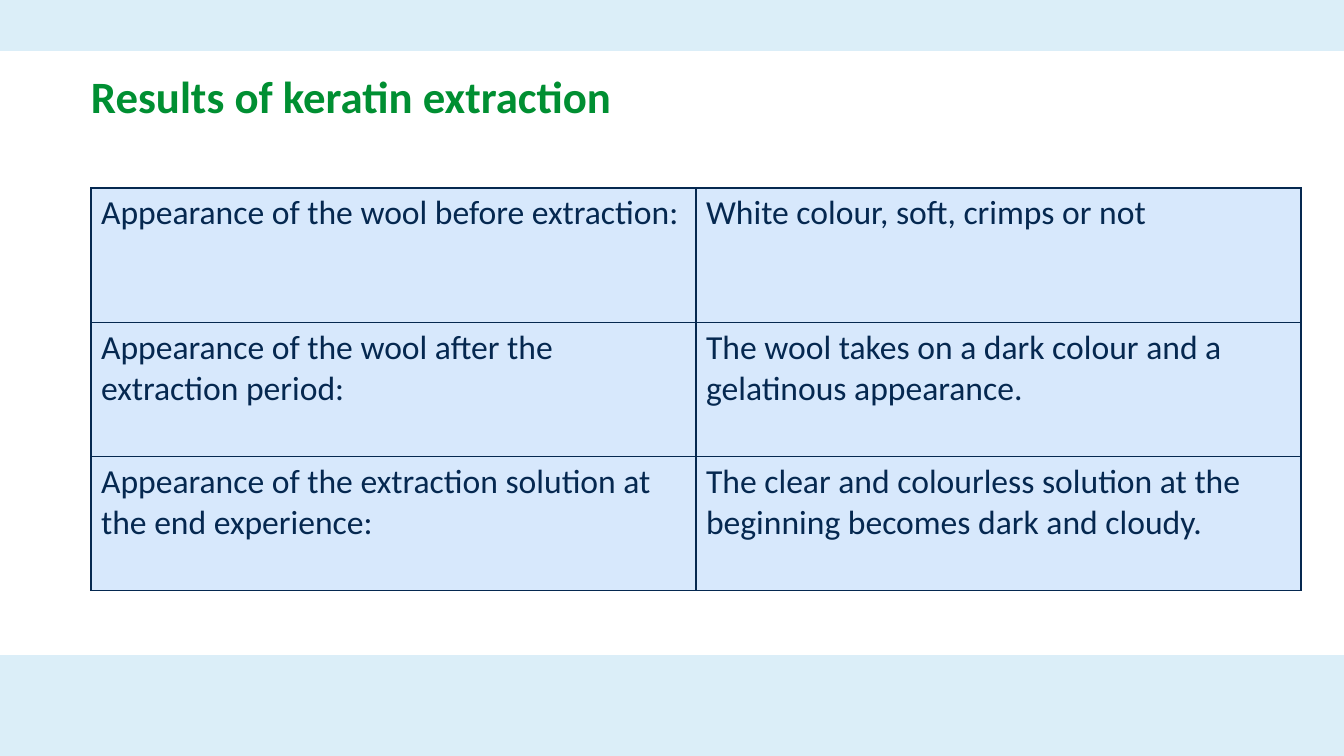
from lxml import etree
from pptx import Presentation
from pptx.dml.color import RGBColor
from pptx.enum.shapes import MSO_SHAPE
from pptx.enum.text import MSO_ANCHOR
from pptx.oxml.ns import qn
from pptx.util import Pt

RECT = MSO_SHAPE.RECTANGLE
MIDDLE = MSO_ANCHOR.MIDDLE

TITLE = "Results of keratin extraction"
RESULTS = [
    ("Appearance of the wool before extraction:",
     "White colour, soft, crimps or not"),
    ("Appearance of the wool after the extraction period:",
     "The wool takes on a dark colour and a gelatinous appearance."),
    ("Appearance of the extraction solution at the end experience:",
     "The clear and colourless solution at the beginning becomes dark and cloudy."),
]

FONT = "Calibri"
BAND, GREEN, NAVY, CELL = "DBEEF8", "008F32", "052850", "D7E8FC"
WIDTH, HEIGHT = 1344, 756
TOP_BAND, BOTTOM_BAND = 51, 101
LEFT = 91
TITLE_BOX = (LEFT, 51, 997, 96)
TABLE_BOX = (LEFT, 188, 1210, 403)


def px(n):
    return round(n * 914400 / 100.8)


def box(*lengths):
    return [px(n) for n in lengths]


def color(hex_string):
    return RGBColor.from_string(hex_string)


def add_run(p, text, size, hex_string, bold=False):
    r = p.add_run()
    r.text = text
    r.font.name = FONT
    r.font.size = Pt(size)
    r.font.bold = bold
    r.font.color.rgb = color(hex_string)


def add_band(s, top, height):
    sp = s.shapes.add_shape(RECT, *box(0, top, WIDTH, height))
    sp.shadow.inherit = False
    sp.fill.solid()
    sp.fill.fore_color.rgb = color(BAND)
    sp.line.fill.background()


def add_title(s):
    tf = s.shapes.add_textbox(*box(*TITLE_BOX)).text_frame
    tf.word_wrap = True
    tf.vertical_anchor = MIDDLE
    tf.margin_left = tf.margin_right = tf.margin_top = tf.margin_bottom = 0
    p = tf.paragraphs[0]
    p.line_spacing = 0.9
    add_run(p, TITLE, 32, GREEN, bold=True)


def set_borders(cell, hex_string, width):
    tcPr = cell._tc.get_or_add_tcPr()
    for i, side in enumerate(("a:lnL", "a:lnR", "a:lnT", "a:lnB")):
        ln = etree.Element(qn(side), w=str(Pt(width)))
        fill = etree.SubElement(ln, qn("a:solidFill"))
        etree.SubElement(fill, qn("a:srgbClr"), val=hex_string)
        tcPr.insert(i, ln)  # borders come before the fill


def add_results(s):
    rows, cols = len(RESULTS), len(RESULTS[0])
    table = s.shapes.add_table(rows, cols, *box(*TABLE_BOX)).table
    for column in table.columns:
        column.width = px(TABLE_BOX[2] / cols)
    for row, texts in zip(table.rows, RESULTS):
        row.height = px(TABLE_BOX[3] / rows)
        for cell, text in zip(row.cells, texts):
            cell.fill.solid()
            cell.fill.fore_color.rgb = color(CELL)
            set_borders(cell, NAVY, 1)
            add_run(cell.text_frame.paragraphs[0], text, 24, NAVY)


def main():
    prs = Presentation()
    prs.slide_width, prs.slide_height = box(WIDTH, HEIGHT)
    s = prs.slides.add_slide(prs.slide_layouts[6])
    add_band(s, HEIGHT - BOTTOM_BAND, BOTTOM_BAND)
    add_band(s, 0, TOP_BAND)
    add_title(s)
    add_results(s)
    prs.save("out.pptx")


if __name__ == "__main__":
    main()
